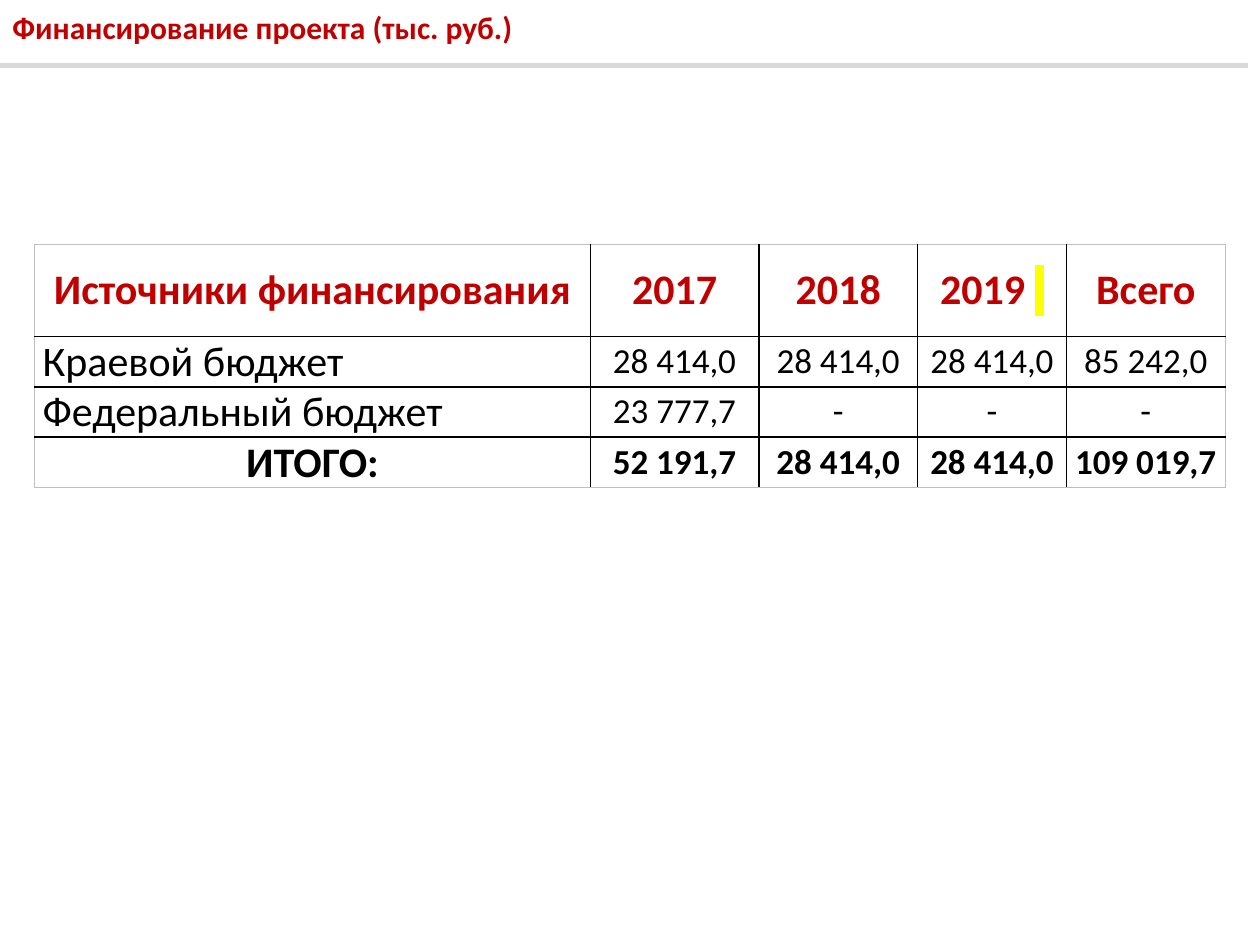
from lxml import etree
from pptx import Presentation
from pptx import util as u
from pptx.dml.color import RGBColor
from pptx.enum import shapes, text
from pptx.oxml.ns import qn

HUES = {"red": "C00000", "ink": "000000", "rule": "D9D9D9",
        "edge": "BFBFBF", "mark": "FFFF00"}
COLS = [11.2, 3.4, 3.2, 3, 3.2]
TALL = [1.85, 0.93, 0.93, 0.93]
ROWS = [
    ["Источники финансирования", "2017", "2018", "2019 ", "Всего"],
    ["Краевой бюджет", "28 414,0", "28 414,0", "28 414,0", "85 242,0"],
    ["Федеральный бюджет", "23 777,7", "-", "-", "-"],
    ["ИТОГО:", "52 191,7", "28 414,0", "28 414,0", "109 019,7"],
]


class Deck:
    """Slide style and the slide being built."""

    def __init__(self, wide, high):
        self.prs = Presentation()
        self.prs.slide_width, self.prs.slide_height = u.Cm(wide), u.Cm(high)
        self.slide = self.prs.slides.add_slide(self.prs.slide_layouts[6])
        self.face = "Calibri"

    def style(self, para, size, hue, bold):
        font = para.font
        font.name, font.size, font.bold = self.face, u.Pt(size), bold
        font.color.rgb = RGBColor.from_string(HUES[hue])

    def title(self, words, x, y, w, h):
        box = self.slide.shapes.add_textbox(*map(u.Cm, (x, y, w, h)))
        frame = box.text_frame
        frame.word_wrap = True
        frame.vertical_anchor = text.MSO_ANCHOR.MIDDLE
        frame.text = words
        self.style(frame.paragraphs[0], 18, "red", True)

    def rule(self, x1, y1, x2, y2):
        line = self.slide.shapes.add_connector(
            shapes.MSO_CONNECTOR.STRAIGHT, *map(u.Cm, (x1, y1, x2, y2)))
        line.line.width = u.Pt(3)
        line.line.color.rgb = RGBColor.from_string(HUES["rule"])
        etree.SubElement(line._element.spPr, qn("a:effectLst"))

    def border(self, cell, sides):
        props = cell._tc.get_or_add_tcPr()
        for spot, (side, outer) in enumerate(sides.items()):
            line = etree.Element(qn(f"a:{side}"), w=str(u.Pt(0.5 if outer else 1)))
            fill = etree.SubElement(line, qn("a:solidFill"))
            etree.SubElement(fill, qn("a:srgbClr"), val=HUES["edge" if outer else "ink"])
            props.insert(spot, line)

    def mark(self, para):
        run = para.add_run()
        run.text = "\N{NO-BREAK SPACE}"
        glow = etree.SubElement(run._r.get_or_add_rPr(), qn("a:highlight"))
        etree.SubElement(glow, qn("a:srgbClr"), val=HUES["mark"])

    def table(self, rows, cols, tall, x, y):
        shape = self.slide.shapes.add_table(
            len(rows), len(cols), *map(u.Cm, (x, y, sum(cols), sum(tall))))
        grid = shape.table
        grid.first_row = grid.horz_banding = False
        for col, wide in zip(grid.columns, cols):
            col.width = u.Cm(wide)
        last, end = len(rows) - 1, len(cols) - 1
        for r, row in enumerate(rows):
            grid.rows[r].height = u.Cm(tall[r])
            for c, words in enumerate(row):
                cell = grid.cell(r, c)
                cell.fill.background()
                cell.margin_left = cell.margin_right = u.Cm(0.16)
                cell.margin_top = cell.margin_bottom = 0
                cell.vertical_anchor = text.MSO_ANCHOR.MIDDLE
                cell.text = words
                para = cell.text_frame.paragraphs[0]
                left = c == 0 and 0 < r < last
                para.alignment = text.PP_ALIGN.LEFT if left else text.PP_ALIGN.CENTER
                self.style(para, 24 if r == 0 or c == 0 else 20,
                           "ink" if r else "red", r in (0, last))
                self.border(cell, {"lnL": c == 0, "lnR": c == end,
                                   "lnT": r == 0, "lnB": r == last})
        return grid


def main():
    deck = Deck(25.4, 19.05)
    deck.title("Финансирование проекта (тыс. руб.)", 0, 0.05, 24, 1)
    grid = deck.table(ROWS, COLS, TALL, 0.7, 4.93)
    deck.mark(grid.cell(0, 3).text_frame.paragraphs[0])
    deck.rule(0, 1.32, 25.15, 1.32)
    deck.prs.save("out.pptx")


if __name__ == "__main__":
    main()
